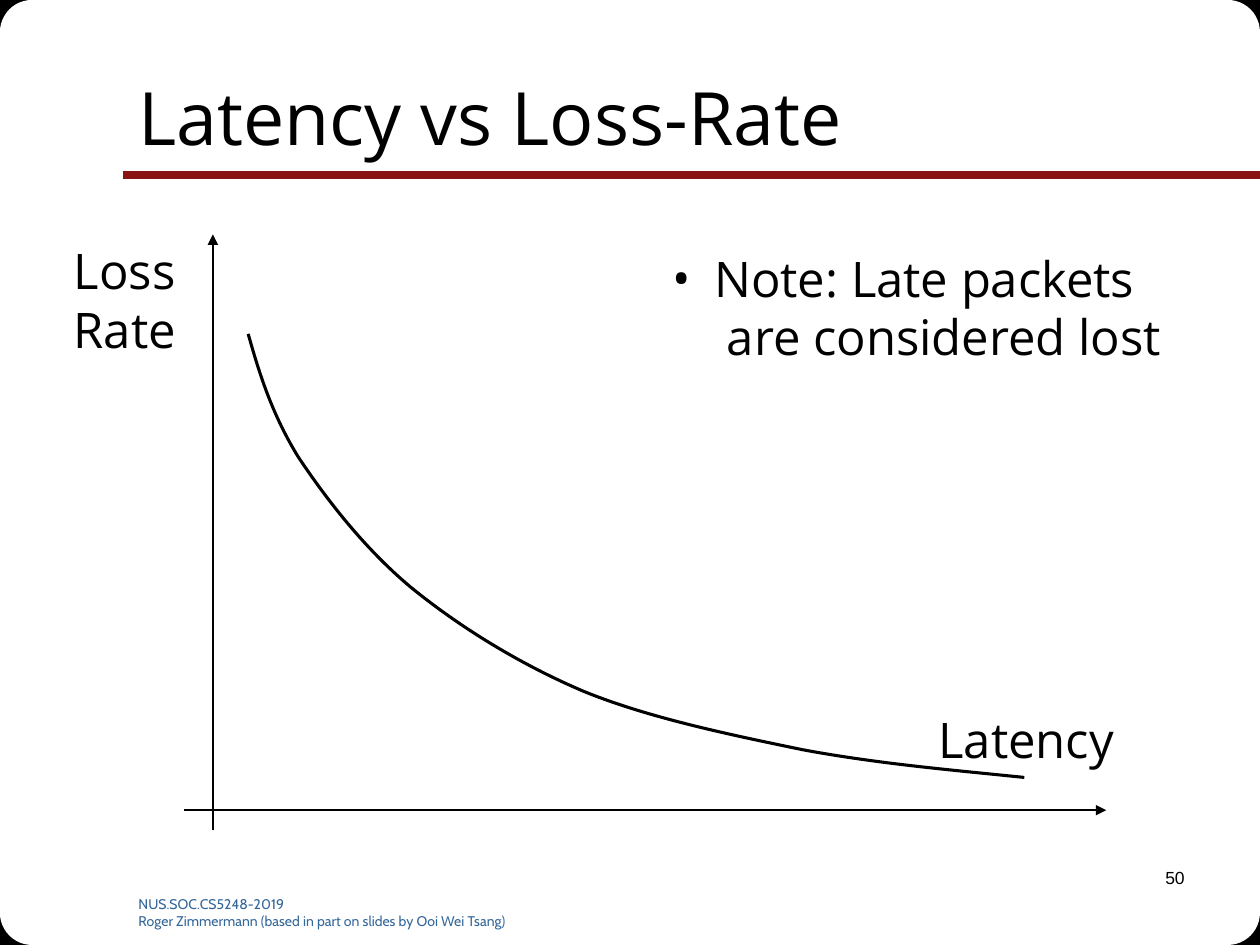
import pptx
import pptx.util
import pptx.dml.color
import pptx.enum.shapes
import pptx.enum.text
import pptx.oxml
import pptx.oxml.ns

Inches = pptx.util.Inches
Pt = pptx.util.Pt
KIND = pptx.enum.shapes.MSO_SHAPE
ALIGN = pptx.enum.text.PP_ALIGN
ANCHOR = pptx.enum.text.MSO_ANCHOR

WIDTH, HEIGHT = 10, 7.5
COLORS = {"black": "000000", "white": "FFFFFF", "red": "891411", "blue": "336699"}
TITLE = "Latency vs Loss-Rate"
TEXTS = [
    ("NUS.SOC.CS5248-2019\nRoger Zimmermann (based in part on slides by Ooi Wei Tsang)",
     (1, 7.06, 3.42, 0.28), 8, "Cabin", "blue", ALIGN.LEFT, True),
    ("50", (7.42, 6.83, 2.08, 0.5), 10, "Arial", "black", ALIGN.RIGHT, True),
    ("Loss\nRate", (0.47, 1.86, 1.04, 1.03), 28, "Open Sans", "black", ALIGN.CENTER, False),
    ("Latency", (7.33, 5.58, 1.63, 0.57), 28, "Open Sans", "black", ALIGN.CENTER, False),
]
NOTE = ("Note: Late packets\v are considered lost",
        (5.24, 1.92, 4.1, 1.04), 28, "Open Sans", "black", ALIGN.LEFT, False)
INDENT = 0.33
RULE = ((10, 1.39), (0.98, 1.39), "red", 4.5)
AXES = [
    ((1.46, 6.43), (8.78, 6.43), "black", 1.25),
    ((1.69, 6.59), (1.69, 1.86), "black", 1.25),
]
START = (1.97, 2.65)
CURVE = [
    ((2.06, 2.97), (2.16, 3.29), (2.37, 3.63)),
    ((2.59, 3.96), (2.89, 4.35), (3.26, 4.66)),
    ((3.64, 4.97), (4.12, 5.27), (4.64, 5.49)),
    ((5.16, 5.7), (5.79, 5.83), (6.37, 5.95)),
    ((6.96, 6.06), (7.54, 6.11), (8.13, 6.17)),
]
UNITS = 1000


def color(name):
    return pptx.dml.color.RGBColor.from_string(COLORS[name])


def node(tag, attrs="", inner=""):
    space = pptx.oxml.ns.nsdecls("a")
    return pptx.oxml.parse_xml(f"<a:{tag} {space} {attrs}>{inner}</a:{tag}>")


def style(frame, size, font, tint, align):
    for par in frame.paragraphs:
        par.alignment = align
        for run in par.runs:
            run.font.size = Pt(size)
            run.font.name = font
            run.font.color.rgb = color(tint)


def add_text(slide, text, box, size, font, tint, align, wrap):
    frame = slide.shapes.add_textbox(*map(Inches, box)).text_frame
    frame.word_wrap = wrap
    frame.text = text
    style(frame, size, font, tint, align)
    return frame


def add_line(slide, start, end, tint, width):
    line = slide.shapes.add_connector(
        pptx.enum.shapes.MSO_CONNECTOR.STRAIGHT, *map(Inches, start + end))
    line.line.color.rgb = color(tint)
    line.line.width = Pt(width)
    line._element.spPr.append(node("effectLst"))
    return line


def add_corners(slide, kind, size, tint):
    for left in (0, WIDTH - size):
        for top in (0, HEIGHT - size):
            shape = slide.shapes.add_shape(kind, *map(Inches, (left, top, size, size)))
            shape.shadow.inherit = False
            shape.fill.solid()
            shape.fill.fore_color.rgb = color(tint)
            shape.line.fill.background()


def local(point):
    x, y = (round((a - b) * UNITS) for a, b in zip(point, START))
    return f'<a:pt x="{x}" y="{y}"/>'


def add_curve(slide):
    ends = [tuple(n * UNITS for n in part[-1]) for part in CURVE]
    path = slide.shapes.build_freeform(*(n * UNITS for n in START),
                                       scale=Inches(1) / UNITS)
    path.add_line_segments(ends, close=False)
    shape = path.convert_to_shape()
    legs = list(shape._element.iter(pptx.oxml.ns.qn("a:lnTo")))
    for leg, part in zip(legs, CURVE):
        leg.getparent().replace(leg, node("cubicBezTo", inner="".join(map(local, part))))
    shape.shadow.inherit = False
    shape.fill.background()
    shape.line.color.rgb = color("black")
    shape.line.width = Pt(1.75)


def add_title(slide):
    title = slide.shapes.title
    title.left, title.top, title.width, title.height = map(Inches, (1, 0.3, 8.5, 1.25))
    title.text_frame.text = TITLE
    title.text_frame.vertical_anchor = ANCHOR.MIDDLE
    style(title.text_frame, 42, "Open Sans", "black", ALIGN.LEFT)
    slide.shapes._spTree.append(title._element)


def add_note(slide):
    props = add_text(slide, *NOTE).paragraphs[0]._p.get_or_add_pPr()
    props.set("marL", str(Inches(INDENT)))
    props.set("indent", str(-Inches(INDENT)))
    props.append(node("buFont", 'typeface="Open Sans"'))
    props.append(node("buChar", 'char="•"'))


def main():
    """Build the slide on latency and loss rate."""
    deck = pptx.Presentation()
    deck.slide_width, deck.slide_height = Inches(WIDTH), Inches(HEIGHT)
    slide = deck.slides.add_slide(deck.slide_layouts[5])
    add_corners(slide, KIND.RECTANGLE, 0.43, "black")
    add_corners(slide, KIND.ROUNDED_RECTANGLE, 1.53, "white")
    add_line(slide, *RULE)
    add_title(slide)
    for text in TEXTS:
        add_text(slide, *text)
    for axis in AXES:
        line = add_line(slide, *axis)
        line.line._get_or_add_ln().append(node("tailEnd", 'type="triangle"'))
    add_curve(slide)
    add_note(slide)
    deck.save("out.pptx")


if __name__ == "__main__":
    main()
